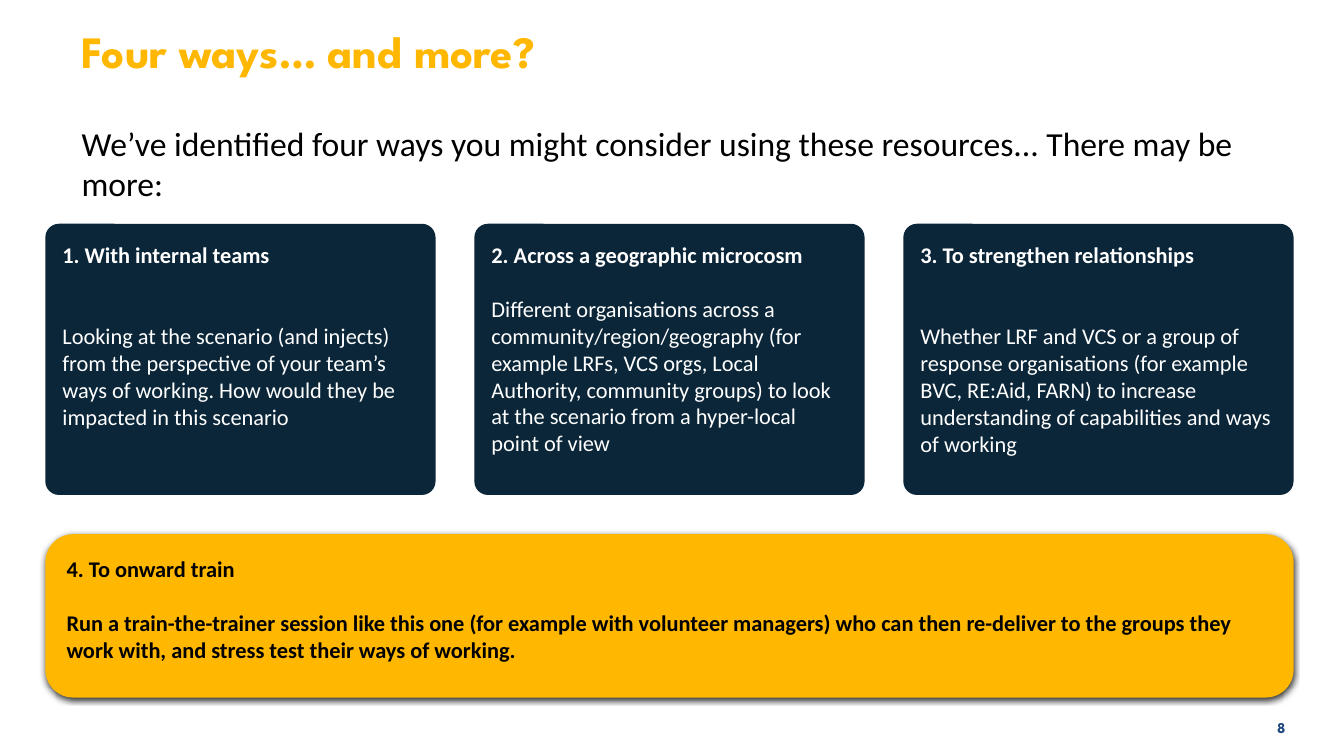
from lxml import etree
from pptx import Presentation
from pptx.dml.color import RGBColor
from pptx.enum.shapes import MSO_SHAPE
from pptx.enum.text import MSO_ANCHOR, MSO_AUTO_SIZE, PP_ALIGN
from pptx.oxml.ns import qn
from pptx.util import Inches, Pt

ROUNDED = MSO_SHAPE.ROUNDED_RECTANGLE
TOP, MIDDLE = MSO_ANCHOR.TOP, MSO_ANCHOR.MIDDLE
LEFT, RIGHT = PP_ALIGN.LEFT, PP_ALIGN.RIGHT
NO_AUTOFIT = MSO_AUTO_SIZE.NONE

NAVY = RGBColor(0x0B, 0x26, 0x38)
AMBER = RGBColor(0xFF, 0xB7, 0x00)
BLUE = RGBColor(0x1F, 0x49, 0x7D)
WHITE = RGBColor(0xFF, 0xFF, 0xFF)
BLACK = RGBColor(0x00, 0x00, 0x00)

HEADING_FONT = "League Spartan"
BODY_FONT = "Calibri"
INSET = 0.13
CARD_TEXT_SIZE = 16
LINE_HEIGHT = 19.5  # points, one line of card text


class SlideBuilder:
    def __init__(self, slide):
        self.slide = slide

    def frame(self, shape, anchor, bottom=INSET):
        text = shape.text_frame
        text.word_wrap = True
        text.auto_size = NO_AUTOFIT
        text.vertical_anchor = anchor
        text.margin_left = text.margin_right = text.margin_top = Inches(INSET)
        text.margin_bottom = Inches(bottom)
        return text

    def add_words(self, paragraph, wording, size, color, font=BODY_FONT,
                  bold=False, align=LEFT, before=0):
        paragraph.alignment = align
        paragraph.space_before = Pt(before)
        run = paragraph.add_run()
        run.text = wording
        run.font.name = font
        run.font.size = Pt(size)
        run.font.bold = bold
        run.font.color.rgb = color

    def place(self, shape, left, top, width, height):
        shape.left, shape.top = Inches(left), Inches(top)
        shape.width, shape.height = Inches(width), Inches(height)

    def title(self, wording, box):
        heading = self.slide.shapes.title
        self.place(heading, *box)
        self.add_words(self.frame(heading, MIDDLE).paragraphs[0], wording, 32,
                       AMBER, HEADING_FONT, bold=True)

    def intro(self, wording, box):
        body = self.slide.placeholders[1]
        self.place(body, *box)
        paragraph = self.frame(body, TOP, bottom=0).paragraphs[0]
        properties = paragraph._p.get_or_add_pPr()
        properties.set("marL", "0")
        properties.set("indent", "0")
        etree.SubElement(properties, qn("a:buNone"))
        self.add_words(paragraph, wording, 24, BLACK)

    def card(self, heading, detail, box, corner, fill, color, gap_lines,
             bottom=INSET, detail_bold=False):
        card = self.slide.shapes.add_shape(ROUNDED, *map(Inches, box))
        card.adjustments[0] = corner
        card.shadow.inherit = False
        card.fill.solid()
        card.fill.fore_color.rgb = fill
        card.line.fill.background()
        text = self.frame(card, TOP, bottom)
        self.add_words(text.paragraphs[0], heading, CARD_TEXT_SIZE, color, bold=True)
        self.add_words(text.add_paragraph(), detail, CARD_TEXT_SIZE, color,
                       bold=detail_bold, before=gap_lines * LINE_HEIGHT)
        return card

    def drop_shadow(self, shape):
        effects = shape._element.spPr.find(qn("a:effectLst"))
        shadow = etree.SubElement(effects, qn("a:outerShdw"), blurRad=str(Pt(4.5)),
                                  dist=str(Pt(1.5)), dir="5400000", rotWithShape="0")
        shade = etree.SubElement(shadow, qn("a:srgbClr"), val=str(BLACK))
        etree.SubElement(shade, qn("a:alpha"), val="80000")

    def page_number(self, number, box):
        corner = self.slide.shapes.add_textbox(*map(Inches, box))
        self.add_words(self.frame(corner, MIDDLE).paragraphs[0], number, 10.7, BLUE,
                       HEADING_FONT, bold=True, align=RIGHT)


# Heading, detail, lines of space between them
WAYS = [
    ("1. With internal teams",
     "Looking at the scenario (and injects) from the perspective of your team’s "
     "ways of working. How would they be impacted in this scenario", 2),
    ("2. Across a geographic microcosm",
     "Different organisations across a community/region/geography (for example "
     "LRFs, VCS orgs, Local Authority, community groups) to look at the scenario "
     "from a hyper-local point of view", 1),
    ("3. To strengthen relationships",
     "Whether LRF and VCS or a group of response organisations (for example "
     "BVC, RE:Aid, FARN) to increase understanding of capabilities and ways "
     "of working", 2),
]
ROW_LEFT, ROW_WIDTH, CARD_WIDTH = 0.45, 12.38, 3.87
CARD_STEP = (ROW_WIDTH - CARD_WIDTH) / (len(WAYS) - 1)


def main():
    deck = Presentation()
    deck.slide_width, deck.slide_height = Inches(13.33), Inches(7.5)
    builder = SlideBuilder(deck.slides.add_slide(deck.slide_layouts[1]))

    # Title and introduction
    builder.title("Four ways… and more?", (0.68, 0.08, 12.42, 0.84))
    builder.intro("We’ve identified four ways you might consider using these "
                  "resources... There may be more:", (0.68, 1.09, 11.97, 0.94))

    # Three ways side by side
    for column, (heading, detail, gap_lines) in enumerate(WAYS):
        builder.card(heading, detail,
                     (ROW_LEFT + column * CARD_STEP, 2.22, CARD_WIDTH, 2.69),
                     0.05, NAVY, WHITE, gap_lines, bottom=0)

    # Fourth way across the full row
    onward = builder.card(
        "4. To onward train",
        "Run a train-the-trainer session like this one (for example with volunteer "
        "managers) who can then re-deliver to the groups they work with, and stress "
        "test their ways of working.",
        (ROW_LEFT, 5.3, ROW_WIDTH, 1.62), 0.17, AMBER, BLACK, 1, detail_bold=True)
    builder.drop_shadow(onward)

    # Page number
    builder.page_number("8", (12.08, 6.93, 0.8, 0.57))

    deck.save("out.pptx")


if __name__ == "__main__":
    main()
